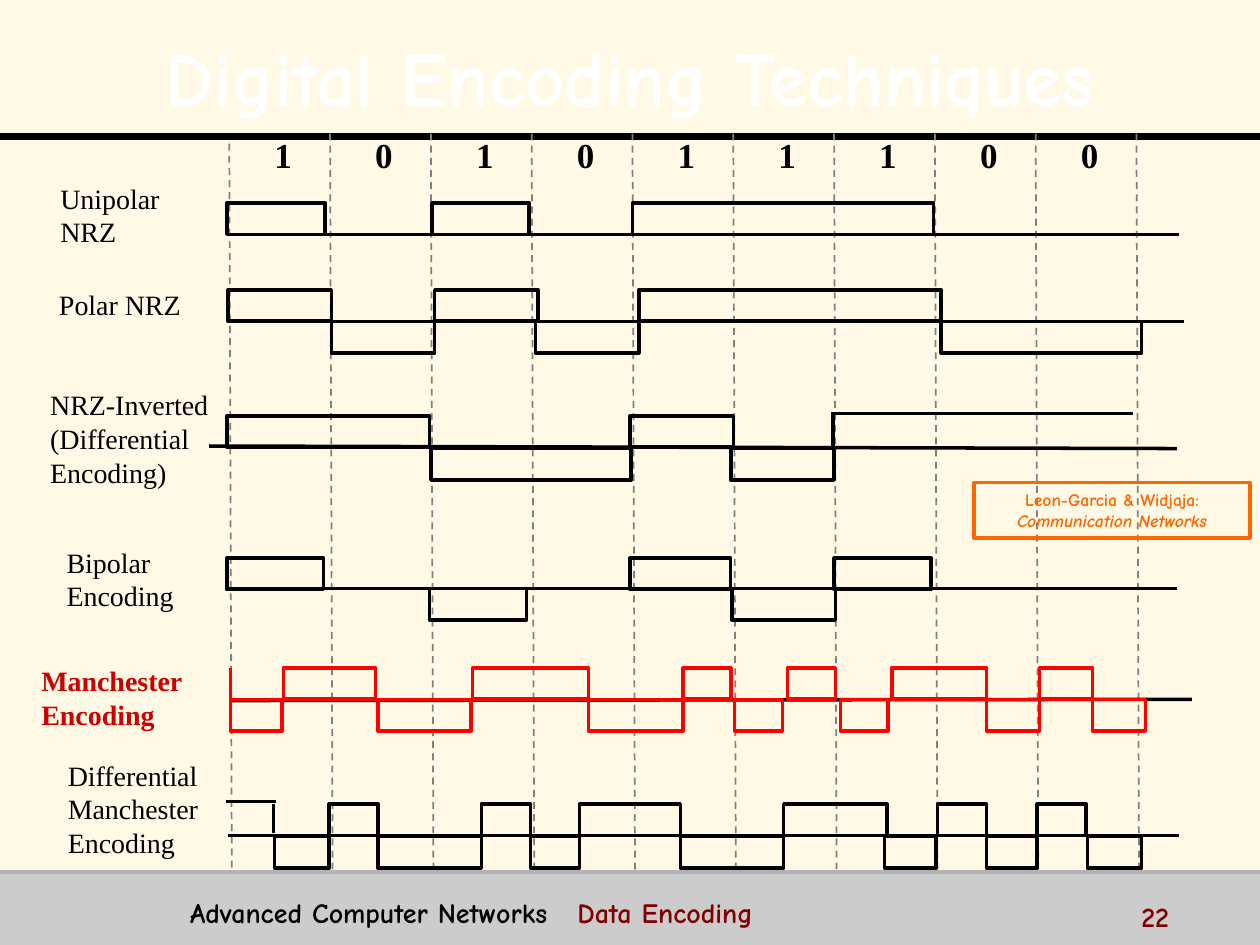
"""Builds a slide comparing the waveforms of six digital encoding techniques."""
from dataclasses import dataclass
from typing import Any

from lxml import etree
from pptx import Presentation
from pptx import util as u
from pptx.dml.color import RGBColor
from pptx.enum import dml, shapes, text
from pptx.oxml import ns, parse_xml

CREAM = RGBColor(0xFF, 0xF9, 0xE6)
WHITE = RGBColor(0xFF, 0xFF, 0xFF)
BLACK = RGBColor(0, 0, 0)
GUIDE_GREY = RGBColor(0x80, 0x80, 0x80)
FOOTER_GREY = RGBColor(0xCC, 0xCC, 0xCC)
RULE_GREY = RGBColor(0xB2, 0xB2, 0xB2)
RED = RGBColor(0xFF, 0, 0)
LABEL_RED = RGBColor(0xCC, 0, 0)
ORANGE = RGBColor(0xFF, 0x66, 0)
MAROON = RGBColor(0x80, 0, 0)
COMIC = "Comic Neue"
TIMES = "Times New Roman"
TEXT_SHADOW = (
    f'<a:effectLst {ns.nsdecls("a")}><a:outerShdw dist="35921" dir="2700000">'
    '<a:srgbClr val="000000"/></a:outerShdw></a:effectLst>'
)
BIT_WIDTH = 0.8
PULSE_HEIGHT = 0.25


@dataclass
class Board:
    slide: Any
    stroke: float = 2

    def line(self, start, end, color=BLACK, width=None, dashed=False):
        connector = self.slide.shapes.add_connector(
            shapes.MSO_CONNECTOR.STRAIGHT, *map(u.Inches, (*start, *end)))
        connector.line.color.rgb = color
        connector.line.width = u.Pt(width or self.stroke)
        if dashed:
            connector.line.dash_style = dml.MSO_LINE.DASH
        etree.SubElement(connector._element.spPr, ns.qn("a:effectLst"))

    def box(self, left, top, width, height, line=None, fill=None):
        rect = self.slide.shapes.add_shape(
            shapes.MSO_SHAPE.RECTANGLE, *map(u.Inches, (left, top, width, height)))
        rect.shadow.inherit = False
        if fill is None:
            rect.fill.background()
        else:
            rect.fill.solid()
            rect.fill.fore_color.rgb = fill
        if line is None:
            rect.line.fill.background()
        else:
            rect.line.color.rgb = line
            rect.line.width = u.Pt(self.stroke)
        return rect

    def set_lines(self, frame, lines, size, font, color, bold=False,
                  align=text.PP_ALIGN.LEFT):
        for index, words in enumerate(lines):
            paragraph = frame.paragraphs[0] if index == 0 else frame.add_paragraph()
            paragraph.alignment = align
            paragraph.add_run().text = words
            paragraph.font.size = u.Pt(size)
            paragraph.font.name = font
            paragraph.font.bold = bold
            paragraph.font.color.rgb = color
        return frame

    def label(self, area, lines, size, font, color, bold=False, wrap=True,
              align=text.PP_ALIGN.LEFT):
        frame = self.slide.shapes.add_textbox(*map(u.Inches, area)).text_frame
        frame.word_wrap = wrap
        return self.set_lines(frame, lines, size, font, color, bold, align)

    def pulses(self, top, spans, color=BLACK):
        for left, right in spans:
            self.box(left, top, right - left, PULSE_HEIGHT, line=color)


ENCODINGS = [
    dict(label=["Unipolar", "NRZ"], area=(0.38, 1.39, 0.99, 0.63),
         axis=((1.81, 1.86), (9.36, 1.86)),
         high=(1.61, [(1.8, 2.58), (3.43, 4.2), (5.02, 7.41)])),
    dict(label=["Polar NRZ"], area=(0.37, 2.23, 1.17, 0.36),
         axis=((1.86, 2.55), (9.4, 2.55)),
         high=(2.3, [(1.81, 2.63), (3.45, 4.27), (5.07, 7.47)]),
         low=(2.55, [(2.63, 3.45), (4.25, 5.07), (7.47, 9.06)])),
    dict(label=["NRZ-Inverted", "(Differential", "Encoding)"], area=(0.3, 3.03, 1.46, 0.9),
         axis=((1.66, 3.54), (9.34, 3.56)),
         high=(3.3, [(1.8, 3.41), (5, 5.82)]),
         low=(3.56, [(3.42, 5.01), (5.8, 6.62)]),
         edges=[((6.61, 3.55), (6.61, 3.27)), ((6.61, 3.28), (8.99, 3.28))]),
    dict(label=["Bipolar", "Encoding"], area=(0.43, 4.28, 1.05, 0.63),
         axis=((1.8, 4.67), (9.34, 4.67)),
         high=(4.43, [(1.8, 2.57), (5, 5.8), (6.62, 7.39)]),
         low=(4.67, [(3.41, 4.18), (5.81, 6.63)])),
    dict(label=["Manchester", "Encoding"], area=(0.23, 5.22, 1.5, 0.64),
         axis=((1.83, 5.56), (9.46, 5.55)), color=RED, label_color=LABEL_RED,
         high=(5.3, [(2.25, 2.98), (3.75, 4.67), (5.42, 5.8), (6.25, 6.63),
                     (7.08, 7.83), (8.25, 8.67)]),
         low=(5.55, [(1.83, 2.24), (3, 3.74), (4.67, 5.42), (5.83, 6.21),
                     (6.67, 7.05), (7.83, 8.25), (8.67, 9.09)]),
         edges=[((1.83, 5.3), (1.83, 5.55))]),
    dict(label=["Differential", "Manchester", "Encoding"], area=(0.44, 5.97, 1.24, 0.9),
         axis=((1.81, 6.63), (9.36, 6.63)),
         high=(6.38, [(2.61, 3), (3.82, 4.21), (4.6, 5.4), (6.22, 7.04),
                      (7.44, 7.83), (8.23, 8.62)]),
         low=(6.64, [(2.18, 2.61), (3, 3.82), (4.21, 4.6), (5.4, 6.22),
                     (7.02, 7.43), (7.83, 8.23), (8.63, 9.06)]),
         edges=[((1.79, 6.36), (2.19, 6.36)), ((2.17, 6.38), (2.17, 6.61))]),
]


def draw_encoding(board, label, area, axis, high, low=(0, ()), edges=(),
                  color=BLACK, label_color=BLACK):
    emphasised = color != BLACK
    board.label(area, label, 16, TIMES, label_color, bold=emphasised, wrap=emphasised)
    board.line(*axis)
    board.pulses(*high, color)
    board.pulses(*low, color)
    for start, end in edges:
        board.line(start, end, color, width=1.5 if emphasised else None)


def main():
    deck = Presentation()
    deck.slide_width, deck.slide_height = u.Inches(10), u.Inches(7.5)
    slide = deck.slides.add_slide(deck.slide_layouts[6])
    slide.background.fill.solid()
    slide.background.fill.fore_color.rgb = CREAM
    board = Board(slide)

    board.box(0, 6.92, 10, 0.58, fill=FOOTER_GREY)
    board.line((0, 1.08), (10, 1.08), width=4)
    board.line((0, 6.92), (10, 6.92), RULE_GREY)

    title = board.label((0.2, 0.13, 9.61, 0.87), ["Digital Encoding Techniques"],
                        44, COMIC, WHITE, bold=True, align=text.PP_ALIGN.CENTER)
    title.vertical_anchor = text.MSO_ANCHOR.MIDDLE
    title.paragraphs[0].line_spacing = 1.1
    title.paragraphs[0].runs[0].font._element.append(parse_xml(TEXT_SHADOW))

    bits = "101011100"
    for index in range(len(bits) + 1):
        x = 1.82 + index * BIT_WIDTH
        board.line((x, 1.06 if index else 1.14), (x + 0.02, 6.9), GUIDE_GREY, 1, dashed=True)
    for index, bit in enumerate(bits):
        board.label((2.08 + index * BIT_WIDTH, 1.01, 0.34, 0.43), [bit],
                    20, TIMES, BLACK, bold=True, wrap=False)

    for encoding in ENCODINGS:
        draw_encoding(board, **encoding)

    citation = board.box(7.73, 3.83, 2.19, 0.44, line=ORANGE).text_frame
    citation.vertical_anchor = text.MSO_ANCHOR.MIDDLE
    board.set_lines(citation, ["Leon-Garcia & Widjaja:", "Communication Networks"],
                    10, COMIC, ORANGE, bold=True, align=text.PP_ALIGN.CENTER)
    citation.paragraphs[1].font.italic = True

    footer = board.label((1.41, 7.06, 7.28, 0.31), ["Advanced Computer Networks   "],
                         16, COMIC, BLACK, bold=True)
    topic = footer.paragraphs[0].add_run()
    topic.text = "Data Encoding"
    topic.font.color.rgb = MAROON
    board.label((8.96, 7.09, 1, 0.25), ["22"], 16, COMIC, MAROON, bold=True)

    deck.save("out.pptx")


if __name__ == "__main__":
    main()
